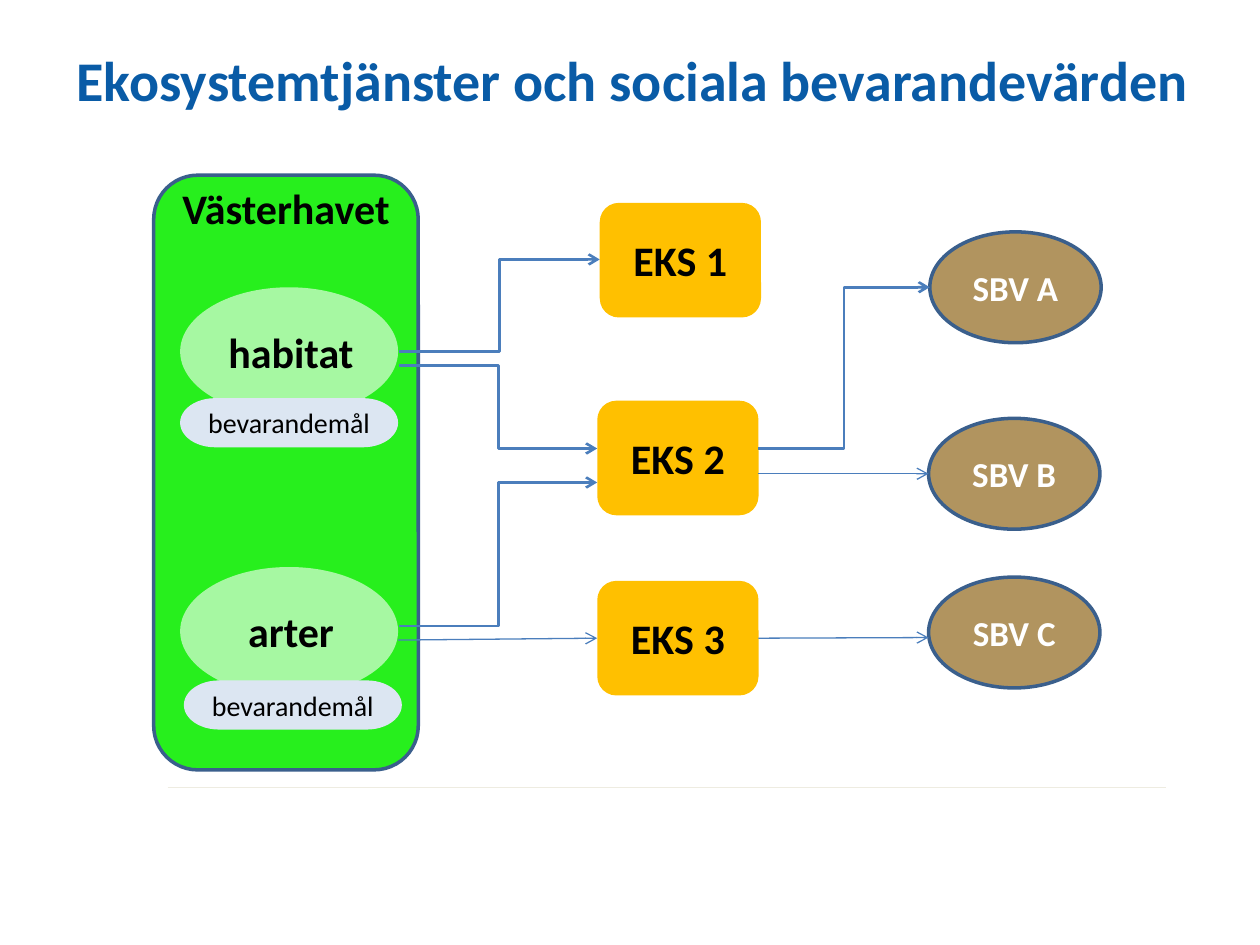
import pptx
import pptx.util
import pptx.dml.color
import pptx.enum.shapes
import pptx.enum.text
import pptx.oxml
import pptx.oxml.ns

Inches = pptx.util.Inches
SHAPES = pptx.enum.shapes.MSO_SHAPE
CONNECTORS = pptx.enum.shapes.MSO_CONNECTOR
ALIGN = pptx.enum.text.PP_ALIGN
ANCHOR = pptx.enum.text.MSO_ANCHOR
LEFT_SIDE, RIGHT_SIDE = 1, 3

THEME = {
    "font": "Calibri",
    "title": "095BA6", "ink": "000000", "light": "FFFFFF",
    "sea": "27EF1D", "nature": "A6F8A2", "goal": "DCE6F2",
    "service": "FFC000", "value": "B1945F",
    "outline": "3A5F8C", "arrow": "4B7EBC", "rule": "EEECE1",
    "title_size": 32, "heading_size": 24, "value_size": 20, "goal_size": 16,
}

TITLE = ("Ekosystemtjänster och sociala bevarandevärden", (0.51, 0, 9.21, 1.25))
SEA = ("Västerhavet", (1.32, 1.4, 1.9, 0.5))
SEA_PANEL = (1.22, 1.39, 2.1, 4.72)
RULE = ((1.33, 6.25), (9.25, 6.25))

# Label and top-left corner; every kind has one size.
NATURE_SIZE, NATURE = (1.73, 1.02), [("habitat", 1.43, 2.28), ("arter", 1.43, 4.5)]
GOAL_SIZE, GOALS = (1.73, 0.39), [("bevarandemål", 1.43, 3.16), ("bevarandemål", 1.46, 5.4)]
SERVICE_SIZE = (1.28, 0.91)
SERVICES = [("EKS 1", 4.76, 1.61), ("EKS 2", 4.74, 3.18), ("EKS 3", 4.74, 4.61)]
VALUE_SIZE = (1.36, 0.88)
VALUES = [("SBV A", 7.38, 1.84), ("SBV B", 7.37, 3.32), ("SBV C", 7.37, 4.58)]

ELBOW_ARROWS = [
    ((3.17, 2.79), (4.76, 2.06)),
    ((3.17, 2.9), (4.74, 3.56)),
    ((3.17, 4.97), (4.74, 3.83)),
    ((6.02, 3.56), (7.38, 2.28)),
]
# Start, end, service joined at the start, service joined at the end.
STRAIGHT_ARROWS = [
    ((3.16, 5.08), (4.74, 5.06), None, "EKS 3"),
    ((6.02, 5.06), (7.37, 5.06), "EKS 3", None),
    ((6.02, 3.76), (7.37, 3.76), None, None),
]


def color(name):
    return pptx.dml.color.RGBColor.from_string(THEME[name])


def write(box, text, size, ink="ink", bold=True, align=ALIGN.CENTER, anchor=ANCHOR.MIDDLE):
    frame = box.text_frame
    frame.word_wrap = True
    frame.vertical_anchor = anchor
    frame.text = text
    para = frame.paragraphs[0]
    para.alignment = align
    font = para.runs[0].font
    font.name, font.size, font.bold = THEME["font"], pptx.util.Pt(THEME[size]), bold
    font.color.rgb = color(ink)


def add_label(page, text, place, size, **style):
    box = page.shapes.add_textbox(*map(Inches, place))
    write(box, text, size, **style)


def add_block(page, kind, place, fill, outlined=False):
    block = page.shapes.add_shape(kind, *map(Inches, place))
    block.shadow.inherit = False
    block.fill.solid()
    block.fill.fore_color.rgb = color(fill)
    if outlined:
        block.line.color.rgb = color("outline")
        block.line.width = pptx.util.Pt(2)
    else:
        block.line.fill.background()
    return block


def add_line(page, kind, start, end, width, ink="arrow", arrow=True):
    line = page.shapes.add_connector(kind, *map(Inches, start + end))
    line.line.color.rgb = color(ink)
    line.line.width = pptx.util.Pt(width)
    properties = line._element.spPr
    if arrow:
        head = pptx.oxml.parse_xml(
            '<a:tailEnd %s type="arrow"/>' % pptx.oxml.ns.nsdecls("a"))
        properties.find(pptx.oxml.ns.qn("a:ln")).append(head)
    properties.append(pptx.oxml.parse_xml("<a:effectLst %s/>" % pptx.oxml.ns.nsdecls("a")))
    return line


def add_sea(page):
    add_block(page, SHAPES.ROUNDED_RECTANGLE, SEA_PANEL, "sea", outlined=True)
    for text, left, top in NATURE:
        width, height = NATURE_SIZE
        add_block(page, SHAPES.OVAL, (left, top, width, height), "nature")
        add_label(page, text, (left + 0.03, top + 0.26, 1.7, 0.5), "heading_size",
                  anchor=ANCHOR.TOP)
    for text, left, top in GOALS:
        goal = add_block(page, SHAPES.FLOWCHART_TERMINATOR, (left, top, *GOAL_SIZE), "goal")
        write(goal, text, "goal_size", bold=False)
    add_label(page, *SEA, "heading_size", anchor=ANCHOR.TOP)


def add_services(page):
    """Draw the service boxes and return them by label."""
    boxes = {}
    for text, left, top in SERVICES:
        boxes[text] = add_block(
            page, SHAPES.ROUNDED_RECTANGLE, (left, top, *SERVICE_SIZE), "service")
        write(boxes[text], text, "heading_size")
    return boxes


def add_values(page):
    for text, left, top in VALUES:
        value = add_block(page, SHAPES.OVAL, (left, top, *VALUE_SIZE), "value", outlined=True)
        write(value, text, "value_size", ink="light")


def add_arrows(page, services):
    for start, end in ELBOW_ARROWS:
        add_line(page, CONNECTORS.ELBOW, start, end, 1.5)
    for start, end, source, target in STRAIGHT_ARROWS:
        line = add_line(page, CONNECTORS.STRAIGHT, start, end, 0.75)
        if source:
            line.begin_connect(services[source], RIGHT_SIDE)
        if target:
            line.end_connect(services[target], LEFT_SIDE)


def main():
    deck = pptx.Presentation()
    deck.slide_width, deck.slide_height = Inches(10), Inches(7.5)
    page = deck.slides.add_slide(deck.slide_layouts[6])
    add_line(page, CONNECTORS.STRAIGHT, *RULE, 0.25, ink="rule", arrow=False)
    add_label(page, *TITLE, "title_size", ink="title", align=ALIGN.LEFT)
    add_sea(page)
    services = add_services(page)
    add_values(page)
    add_arrows(page, services)
    deck.save("out.pptx")


if __name__ == "__main__":
    main()
